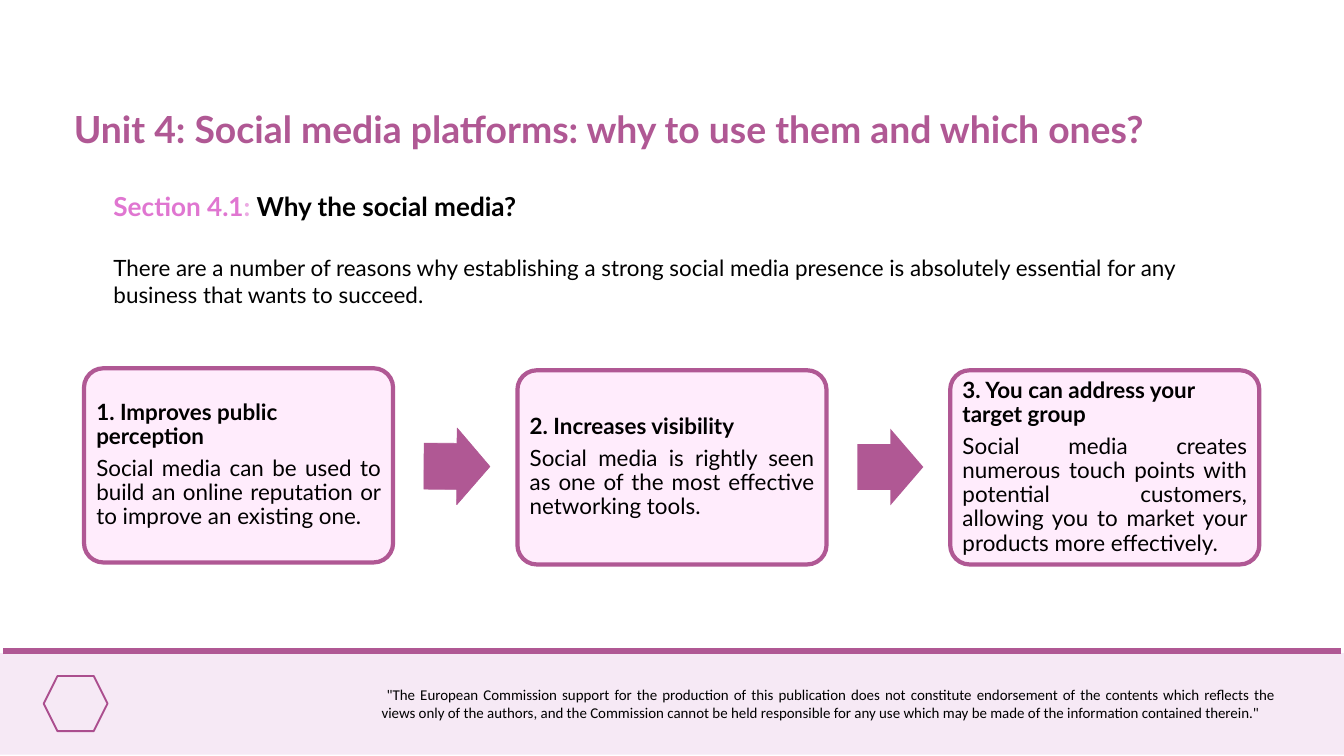
from typing import NamedTuple

from pptx import Presentation
from pptx import util as u
from pptx.dml.color import RGBColor
from pptx.enum import shapes as sh, text as tx
from pptx.oxml.ns import qn
from lxml import etree

PLUM = RGBColor(0xB0, 0x58, 0x94)
MARK = RGBColor(0xAB, 0x4E, 0x8E)
PINK = RGBColor(0xE0, 0x76, 0xD1)
PALE = RGBColor(0xEC, 0xAA, 0xE3)
ROSE = RGBColor(0xFF, 0xEC, 0xFC)
MIST = RGBColor(0xF6, 0xE9, 0xF5)
BLACK = RGBColor(0, 0, 0)
KIND = sh.MSO_SHAPE
LEFT, FULL = tx.PP_ALIGN.LEFT, tx.PP_ALIGN.JUSTIFY


class Box(NamedTuple):
    left: float
    top: float
    width: float
    height: float


class Run(NamedTuple):
    text: str
    size: float
    color: RGBColor = BLACK
    bold: bool = False
    name: str = "Lato"


class Para(NamedTuple):
    runs: list[Run]
    form: dict = {}


class Card(NamedTuple):
    left: float
    top: float
    head: str
    body: str


class Arrow(NamedTuple):
    left: float
    top: float
    turn: float
    edge: float


CARDS = [
    Card(1.25, 5.48, "1. Improves public perception",
         "Social media can be used to build an online reputation or to improve an existing one."),
    Card(7.7, 5.51, "2. Increases visibility",
         "Social media is rightly seen as one of the most effective networking tools."),
    Card(14.14, 5.51, "3. You can address your target group",
         "Social media creates numerous touch points with potential customers, "
         "allowing you to market your products more effectively."),
]
ARROWS = [Arrow(6.31, 6.37, 0.3, 0.75), Arrow(12.76, 6.38, 0, 0)]


def apply(item, form: dict) -> None:
    for key, value in form.items():
        setattr(item, key, value)


def fill_text(frame, paras: list[Para], form: dict) -> None:
    apply(frame, {"word_wrap": True, **form})
    for i, para in enumerate(paras):
        line = frame.paragraphs[0] if i == 0 else frame.add_paragraph()
        apply(line, {"alignment": LEFT, **para.form})
        for part in para.runs:
            run = line.add_run()
            run.text = part.text
            run.font.color.rgb = part.color
            apply(run.font, {"size": u.Pt(part.size), "bold": part.bold, "name": part.name})


def add_text(slide, box: Box, paras: list[Para]) -> None:
    label = slide.shapes.add_textbox(*map(u.Inches, box))
    fill_text(label.text_frame, paras, {"auto_size": tx.MSO_AUTO_SIZE.SHAPE_TO_FIT_TEXT})


def add_shape(slide, kind: KIND, box: Box, fill: RGBColor | None,
              line: RGBColor | None = None, width: float = 0):
    shape = slide.shapes.add_shape(kind, *map(u.Inches, box))
    shape.shadow.inherit = False
    if fill is None:
        shape.fill.background()
    else:
        shape.fill.solid()
        shape.fill.fore_color.rgb = fill
    if width:
        shape.line.color.rgb = line
        shape.line.width = u.Pt(width)
    else:
        shape.line.fill.background()
    return shape


def add_rule(slide, left: float, right: float, top: float) -> None:
    rule = slide.shapes.add_connector(sh.MSO_CONNECTOR.STRAIGHT,
                                      *map(u.Inches, (left, top, right, top)))
    rule.line.color.rgb = PLUM
    rule.line.width = u.Pt(6.75)
    etree.SubElement(rule._element.spPr, qn("a:effectLst"))


def add_card(slide, card: Card) -> None:
    shape = add_shape(slide, KIND.ROUNDED_RECTANGLE,
                      Box(card.left, card.top, 4.6, 2.89), ROSE, PLUM, 4.5)
    shape.adjustments[0] = 0.1
    gaps = {"line_spacing": 0.9, "space_after": u.Pt(8.4)}
    sides = {f"margin_{side}": u.Inches(0.1) for side in ("left", "top", "right", "bottom")}
    paras = [Para([Run(card.head, 24, bold=True)], gaps),
             Para([Run(card.body, 24)], {**gaps, "alignment": FULL})]
    fill_text(shape.text_frame, paras, {"vertical_anchor": tx.MSO_ANCHOR.MIDDLE, **sides})


def add_arrow(slide, arrow: Arrow) -> None:
    shape = add_shape(slide, KIND.RIGHT_ARROW, Box(arrow.left, arrow.top, 0.98, 1.14),
                      PLUM, PLUM, arrow.edge)
    shape.adjustments[0] = 0.6
    shape.adjustments[1] = 0.5
    shape.rotation = arrow.turn


def add_foot(slide) -> None:
    add_shape(slide, KIND.RECTANGLE, Box(0, 9.72, 20, 1.51), MIST)
    add_rule(slide, 0.05, 19.95, 9.69)
    add_shape(slide, KIND.HEXAGON, Box(0.65, 10.06, 0.95, 0.82), None, MARK, 2)
    add_text(slide, Box(5.58, 10.15, 13.5, 0.64), [Para([Run(
        " \"The European Commission support for the production of this publication does not "
        "constitute endorsement of the contents which reflects the views only of the authors, "
        "and the Commission cannot be held responsible for any use which may be made of the "
        "information contained therein.\"", 16, name="Calibri")], {"alignment": FULL})])


def main() -> None:
    deck = Presentation()
    apply(deck, {"slide_width": u.Inches(20), "slide_height": u.Inches(11.25)})
    slide = deck.slides.add_slide(deck.slide_layouts[6])
    add_foot(slide)
    add_text(slide, Box(1, 1.53, 16.67, 0.77), [Para([Run(
        "Unit 4: Social media platforms: why to use them and which ones?", 40, PLUM, True)])])
    add_text(slide, Box(1.59, 2.79, 16.41, 1.85), [
        Para([Run("Section 4.1", 28, PINK, True), Run(": ", 28, PALE, True),
              Run("Why the social media?", 28, bold=True)]),
        Para([Run("There are a number of reasons why establishing a strong social media presence "
                  "is absolutely essential for any business that wants to succeed.", 24)],
             {"space_before": u.Pt(34)}),
    ])
    for card in CARDS:
        add_card(slide, card)
    for arrow in ARROWS:
        add_arrow(slide, arrow)
    deck.save("out.pptx")


if __name__ == "__main__":
    main()
